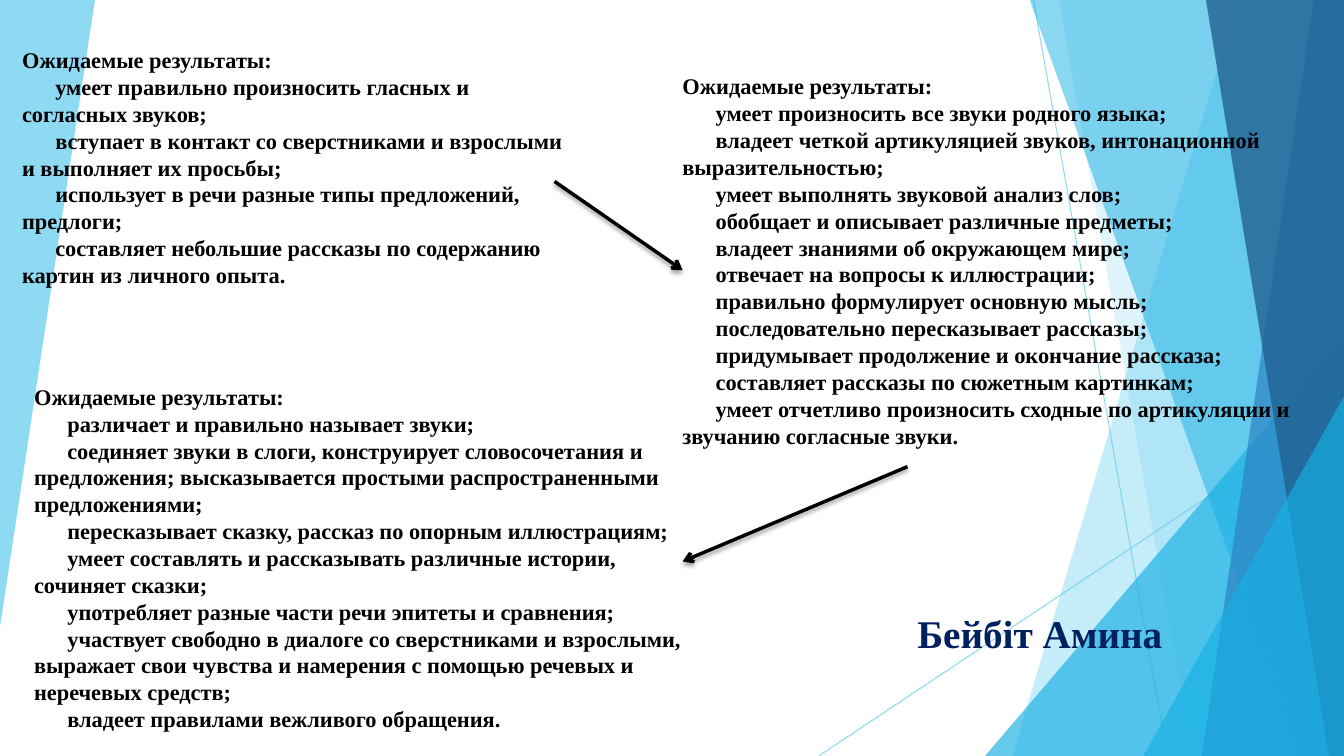
from lxml.etree import SubElement
from pptx import Presentation
from pptx.dml.color import RGBColor
from pptx.enum.shapes import MSO_CONNECTOR as CONN, MSO_SHAPE as SHAPE
from pptx.enum.text import MSO_AUTO_SIZE as AUTO
from pptx.oxml.ns import qn
from pptx.util import Inches, Pt

W, H, TOP = 13.33, 7.5, -0.01
HEADING = "Ожидаемые результаты:"
FIRST = [
    "умеет правильно произносить гласных и согласных звуков;",
    "вступает в контакт со сверстниками и взрослыми и выполняет их просьбы;",
    "использует в речи разные типы предложений, предлоги;",
    "составляет небольшие рассказы по содержанию картин из личного опыта.",
]
SECOND = [
    "умеет произносить все звуки родного языка;",
    "владеет четкой артикуляцией звуков, интонационной выразительностью;",
    "умеет выполнять звуковой анализ слов;",
    "обобщает и описывает различные предметы;",
    "владеет знаниями об окружающем мире;",
    "отвечает на вопросы к иллюстрации;",
    "правильно формулирует основную мысль;",
    "последовательно пересказывает рассказы;",
    "придумывает продолжение и окончание рассказа;",
    "составляет рассказы по сюжетным картинкам;",
    "умеет отчетливо произносить сходные по артикуляции и звучанию согласные звуки.",
]
THIRD = [
    "различает и правильно называет звуки;",
    "соединяет звуки в слоги, конструирует словосочетания и предложения; "
    "высказывается простыми распространенными предложениями;",
    "пересказывает сказку, рассказ по опорным иллюстрациям;",
    "умеет составлять и рассказывать различные истории, сочиняет сказки;",
    "употребляет разные части речи эпитеты и сравнения;",
    "участвует свободно в диалоге со сверстниками и взрослыми, выражает свои "
    "чувства и намерения с помощью речевых и неречевых средств;",
    "владеет правилами вежливого обращения.",
]


def paint(fmt, color, alpha=100):
    fmt.solid()
    fmt.fore_color.rgb = RGBColor.from_string(color)
    if alpha < 100:
        clr = fmt._xPr.find(qn("a:solidFill"))[0]
        SubElement(clr, qn("a:alpha"), val=str(alpha * 1000))


def finish(sp, color, alpha):
    sp.shadow.inherit = False
    paint(sp.fill, color, alpha)
    sp.line.fill.background()


def facet(s, points, color, alpha):
    start, *rest = [(Inches(x), Inches(y)) for x, y in points]
    builder = s.shapes.build_freeform(*start, scale=1.0)
    builder.add_line_segments(rest, close=True)
    finish(builder.convert_to_shape(), color, alpha)


def right_facet(s, top, bottom, color, alpha):
    facet(s, [(top, TOP), (W, TOP), (W, H), (bottom, H)], color, alpha)


def corner(s, x, y):
    sp = s.shapes.add_shape(SHAPE.ISOSCELES_TRIANGLE, Inches(x), Inches(y),
                            Inches(W - x), Inches(H - y))
    sp.adjustments[0] = 1
    finish(sp, "17B0E4", 66)


def line(s, start, end, color, width, alpha=100):
    ends = [Inches(v) for v in (*start, *end)]
    sp = s.shapes.add_connector(CONN.STRAIGHT, *ends)
    sp.line.width = Pt(width)
    paint(sp.line.fill, color, alpha)
    return sp, SubElement(sp._element.spPr, qn("a:effectLst"))


def arrow(s, start, end):
    sp, effects = line(s, start, end, "000000", 2.5)
    SubElement(sp.line._ln, qn("a:tailEnd"), type="arrow")
    shadow = SubElement(effects, qn("a:outerShdw"), blurRad=str(Pt(3)),
                        dist=str(Pt(2)), dir="5400000", rotWithShape="0")
    clr = SubElement(shadow, qn("a:srgbClr"), val="000000")
    SubElement(clr, qn("a:alpha"), val="35000")


def write(p, text, size=16, color="000000", indent=0, spacing=None):
    r = p.add_run()
    r.text = text
    r.font.name = "Times New Roman"
    r.font.size = Pt(size)
    r.font.bold = True
    paint(r.font.fill, color)
    if spacing:
        p.line_spacing = Pt(spacing)
    if indent:
        pPr = p._p.get_or_add_pPr()
        pPr.set("marL", "0")
        pPr.set("indent", str(Inches(indent)))


def text_box(s, x, y, w, h, wrap=True):
    tf = s.shapes.add_textbox(Inches(x), Inches(y), Inches(w), Inches(h)).text_frame
    tf.word_wrap = wrap
    tf.auto_size = AUTO.SHAPE_TO_FIT_TEXT
    return tf


def results(s, x, y, w, h, items):
    tf = text_box(s, x, y, w, h)
    write(tf.paragraphs[0], HEADING, spacing=19.2)
    for item in items:
        write(tf.add_paragraph(), item, indent=0.33, spacing=19.2)


def background(s):
    facet(s, [(0, TOP), (0.94, TOP), (0.94, 0.01), (0, 6.22)], "5FCBEF", 70)
    line(s, (10.25, 0), (11.58, H), "5FCBEF", 0.75, 70)
    line(s, (W, 4.03), (8.12, H), "5FCBEF", 0.75, 70)
    right_facet(s, 12.28, 10.04, "5FCBEF", 36)
    right_facet(s, 10.5, 11.83, "5FCBEF", 20)
    corner(s, 9.77, 3.33)
    right_facet(s, 10.21, 12.91, "17B0E4", 50)
    right_facet(s, 13.03, 11.92, "2E83C3", 70)
    right_facet(s, 11.96, 13.18, "226292", 80)
    corner(s, 11.34, 3.93)


def main():
    prs = Presentation()
    prs.slide_width, prs.slide_height = Inches(W), Inches(H)
    s = prs.slides.add_slide(prs.slide_layouts[6])
    background(s)
    results(s, 0.12, 0.41, 5.71, 2.52, FIRST)
    results(s, 6.67, 0.67, 6.67, 4.01, SECOND)
    results(s, 0.24, 3.75, 6.67, 3.64, THIRD)
    arrow(s, (5.5, 1.8), (6.77, 2.68))
    arrow(s, (9, 4.63), (6.77, 5.57))
    tf = text_box(s, 9, 6, 2.66, 0.57, wrap=False)
    write(tf.paragraphs[0], "Бейбіт Амина", size=28, color="002060")
    prs.save("out.pptx")


if __name__ == "__main__":
    main()
